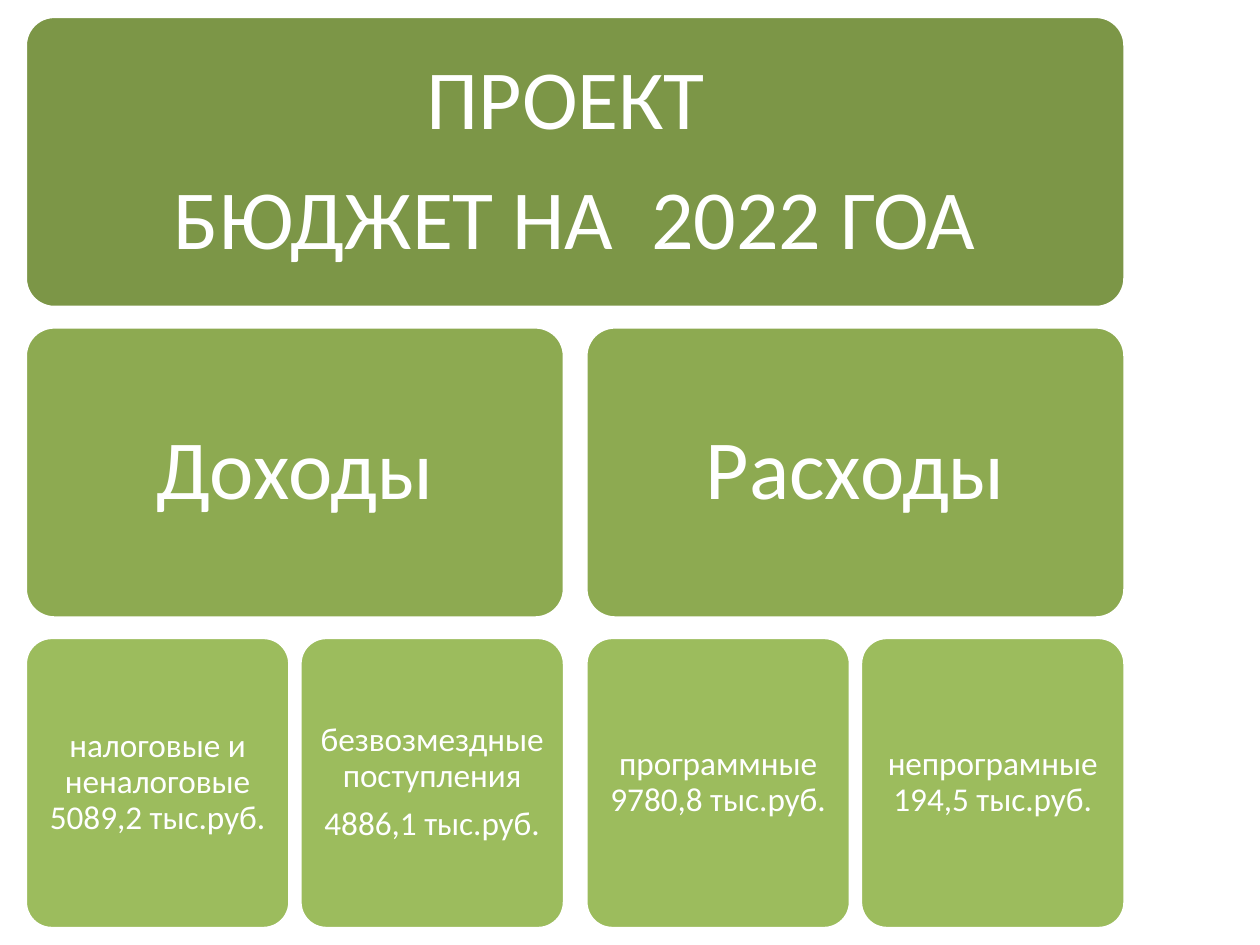
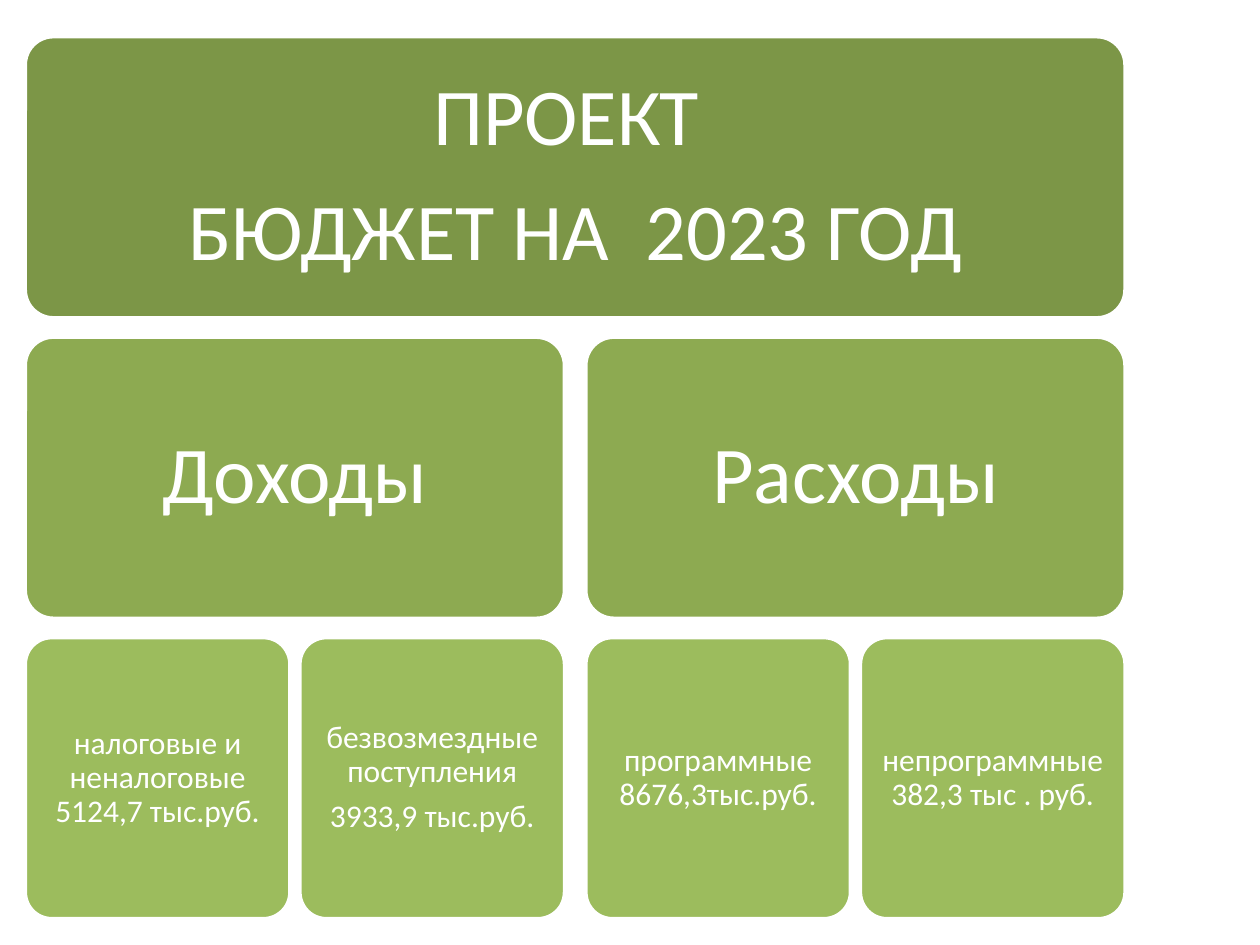
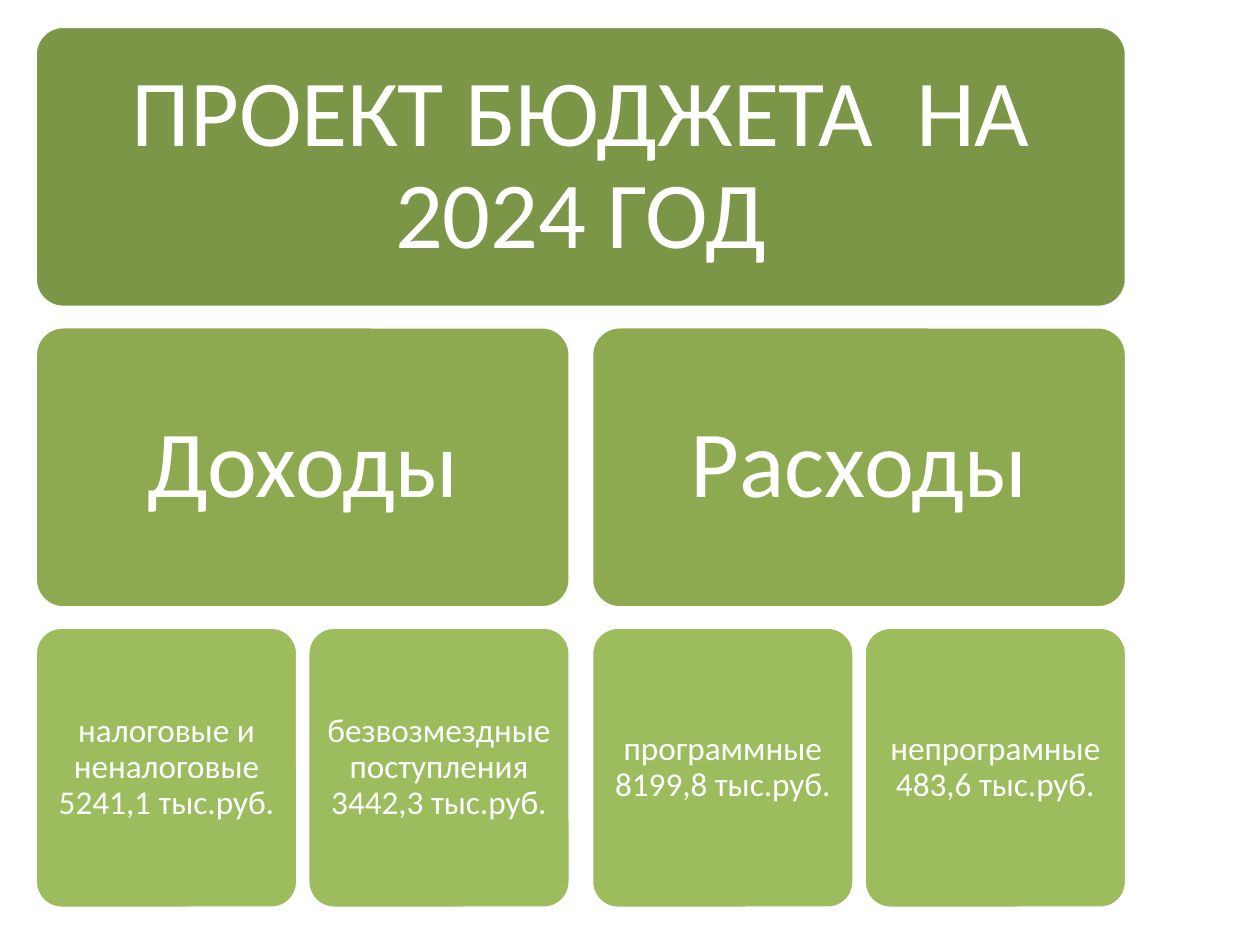
from dataclasses import dataclass

from pptx import Presentation
from pptx.dml.color import RGBColor
from pptx.enum.shapes import MSO_SHAPE as Shape
from pptx.enum.text import MSO_ANCHOR as Anchor, PP_ALIGN as Align
from pptx.util import Cm, Pt


@dataclass(frozen=True)
class Theme:
    """Colours, type and spacing shared by all pages."""
    font: str = "Calibri"
    white: RGBColor = RGBColor.from_string("FFFFFF")
    header: RGBColor = RGBColor.from_string("7C9647")
    branch: RGBColor = RGBColor.from_string("8DAA51")
    leaf: RGBColor = RGBColor.from_string("9CBC5D")
    outline: float = 2
    corner: float = 0.1
    line_spacing: float = 0.9
    space_ratio: float = 0.35
    inset_ratio: float = 0.3
    row_gap: float = 0.39
    branch_gap: float = 0.43
    leaf_gap: float = 0.2


@dataclass(frozen=True)
class Box:
    """A rectangle in centimetres."""
    left: float
    top: float
    width: float
    height: float

    def rows(self, count, gap):
        """Split the box into equal rows."""
        height = (self.height - gap * (count - 1)) / count
        return [Box(self.left, self.top + i * (height + gap), self.width, height)
                for i in range(count)]

    def columns(self, count, gap):
        """Split the box into equal columns."""
        width = (self.width - gap * (count - 1)) / count
        return [Box(self.left + i * (width + gap), self.top, width, self.height)
                for i in range(count)]


@dataclass(frozen=True)
class Budget:
    """The wording, place and type sizes of one yearly budget."""
    box: Box
    large: int
    small: int
    title: str
    income: tuple
    spending: tuple


THEME = Theme()

BUDGETS = [
    Budget(Box(0.51, 0.33, 22.17, 18.39), 48, 19, "ПРОЕКТ \nБЮДЖЕТ НА  2022 ГОА",
           ("налоговые и неналоговые 5089,2 тыс.руб.",
            "безвозмездные поступления\n4886,1 тыс.руб."),
           ("программные 9780,8 тыс.руб.", "непрограмные 194,5 тыс.руб.")),
    Budget(Box(0.51, 0.74, 22.17, 17.78), 46, 18, "ПРОЕКТ \nБЮДЖЕТ НА  2023 ГОД",
           ("налоговые и неналоговые 5124,7 тыс.руб.",
            "безвозмездные поступления\n3933,9 тыс.руб."),
           ("программные 8676,3тыс.руб.", "непрограммные 382,3 тыс . руб.")),
    Budget(Box(0.71, 0.53, 22, 17.78), 54, 19, "ПРОЕКТ БЮДЖЕТА  НА 2024 ГОД",
           ("налоговые и неналоговые 5241,1 тыс.руб.",
            "безвозмездные поступления 3442,3 тыс.руб."),
           ("программные 8199,8 тыс.руб.", "непрограмные 483,6 тыс.руб.")),
]


def add_card(page, box, text, fill, size):
    """Draw a rounded card with centred text."""
    card = page.shapes.add_shape(Shape.ROUNDED_RECTANGLE, Cm(box.left), Cm(box.top),
                                 Cm(box.width), Cm(box.height))
    card.adjustments[0] = THEME.corner
    card.shadow.inherit = False
    card.fill.solid()
    card.fill.fore_color.rgb = fill
    card.line.color.rgb = THEME.white
    card.line.width = Pt(THEME.outline)
    frame = card.text_frame
    frame.word_wrap = True
    frame.vertical_anchor = Anchor.MIDDLE
    inset = Pt(size * THEME.inset_ratio)
    frame.margin_left = frame.margin_right = inset
    frame.margin_top = frame.margin_bottom = inset
    frame.text = text
    for para in frame.paragraphs:
        para.alignment = Align.CENTER
        para.line_spacing = THEME.line_spacing
        para.space_after = Pt(size * THEME.space_ratio)
        para.font.name = THEME.font
        para.font.size = Pt(size)
        para.font.color.rgb = THEME.white


def add_branch(page, head, foot, name, leaves, budget):
    """Draw a branch card and the row of leaf cards below it."""
    add_card(page, head, name, THEME.branch, budget.large)
    for box, text in zip(foot.columns(len(leaves), THEME.leaf_gap), leaves):
        add_card(page, box, text, THEME.leaf, budget.small)


def add_budget_page(deck, budget):
    """Add a page with the title card and both branches of a budget."""
    page = deck.slides.add_slide(deck.slide_layouts[6])
    title, middle, bottom = budget.box.rows(3, THEME.row_gap)
    add_card(page, title, budget.title, THEME.header, budget.large)
    branches = (("Доходы", budget.income), ("Расходы", budget.spending))
    heads, feet = (row.columns(2, THEME.branch_gap) for row in (middle, bottom))
    for head, foot, (name, leaves) in zip(heads, feet, branches):
        add_branch(page, head, foot, name, leaves, budget)


def main():
    """Build and save the deck."""
    deck = Presentation()
    deck.slide_width, deck.slide_height = Cm(25.4), Cm(19.05)
    for budget in BUDGETS:
        add_budget_page(deck, budget)
    deck.save("out.pptx")


if __name__ == "__main__":
    main()
